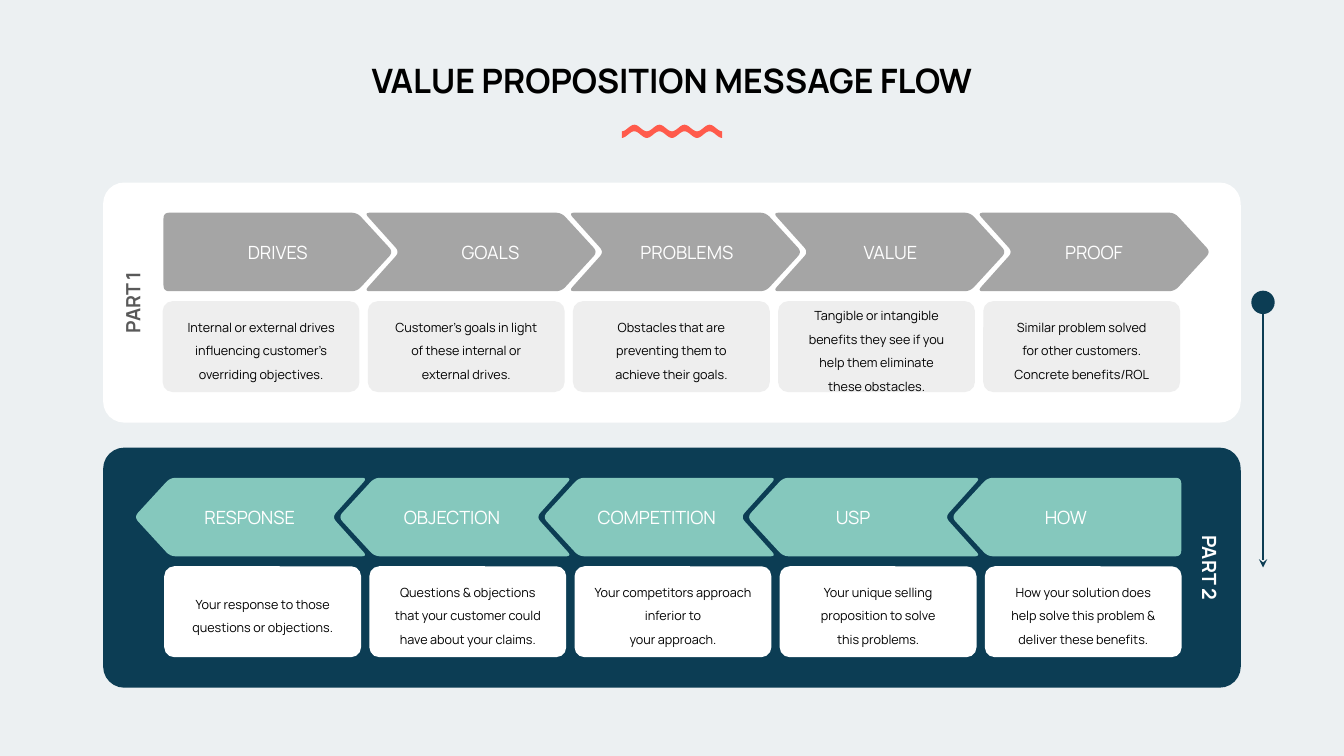
from dataclasses import dataclass
from math import cos, hypot, pi

from lxml.etree import SubElement
from pptx import Presentation
from pptx.dml.color import RGBColor
from pptx.enum.shapes import MSO_CONNECTOR, MSO_SHAPE
from pptx.enum.text import MSO_ANCHOR, PP_ALIGN
from pptx.oxml.ns import qn
from pptx.shapes.autoshape import Shape
from pptx.slide import Slide
from pptx.util import Cm, Pt

FONT = "Manrope"
PALE = RGBColor(0xEC, 0xF0, 0xF2)
BLACK = RGBColor(0, 0, 0)
WHITE = RGBColor(0xFF, 0xFF, 0xFF)
CORAL = RGBColor(0xFF, 0x5B, 0x4C)
NAVY = RGBColor(0x0C, 0x3D, 0x54)
TEAL = RGBColor(0x85, 0xC8, 0xBD)
GREY = RGBColor(0xA5, 0xA5, 0xA5)
LIGHT_GREY = RGBColor(0xEE, 0xEE, 0xEE)
DARK_GREY = RGBColor(0x59, 0x59, 0x59)

# Lengths in centimetres
CHEVRON_WIDTH, CHEVRON_PITCH = 5.75, 5.15
CARD_WIDTH, CARD_HEIGHT, CARD_PITCH = 4.96, 2.29, 5.17
PANEL_LEFT, PANEL_WIDTH, PANEL_HEIGHT = 2.6, 28.67, 6.05
CHEVRON_HEAD = [(4.88, 0), (5.79, 0.99), (4.88, 1.98)]
NOTCHED = [(-0.09, 0), *CHEVRON_HEAD, (-0.09, 1.98), (0.8, 0.99)]
FLAT_TAILED = [(0, 0), *CHEVRON_HEAD, (0, 1.98)]

Point = tuple[float, float]


@dataclass
class Step:
    label: str
    label_center: float
    description: str


@dataclass
class Part:
    name: str
    name_center: float
    name_color: RGBColor
    rotation: int
    top: float
    panel_color: RGBColor
    chevron_color: RGBColor
    chevron_left: float
    card_color: RGBColor
    card_left: float
    points_left: bool
    flat_tail: int
    steps: list[Step]


PART_1 = Part("PART 1", 3.34, DARK_GREY, 270, 4.6, WHITE, GREY, 4.12,
              LIGHT_GREY, 4.1, False, 0, [
    Step("DRIVES", 7.0,
         "Internal or external drives influencing customer’s overriding objectives."),
    Step("GOALS", 12.36,
         "Customer’s goals in light\nof these internal or\nexternal drives."),
    Step("PROBLEMS", 17.31,
         "Obstacles that are preventing them to\nachieve their goals."),
    Step("VALUE", 22.44,
         "Tangible or intangible benefits they see if you\n"
         "help them eliminate\nthese obstacles."),
    Step("PROOF", 27.57,
         "Similar problem solved\nfor other customers.\nConcrete benefits/ROL"),
])
PART_2 = Part("PART 2", 30.49, WHITE, 90, 11.28, NAVY, TEAL, 3.42,
              WHITE, 4.14, True, 4, [
    Step("RESPONSE", 6.29, "Your response to those questions or objections."),
    Step("OBJECTION", 11.39,
         "Questions & objections that your customer could have about your claims."),
    Step("COMPETITION", 16.55,
         "Your competitors approach inferior to\nyour approach."),
    Step("USP", 21.5, "Your unique selling proposition to solve\nthis problems."),
    Step("HOW", 26.86,
         "How your solution does help solve this problem & deliver these benefits."),
])


def paint(shape: Shape, color: RGBColor) -> None:
    shape.shadow.inherit = False
    shape.fill.solid()
    shape.fill.fore_color.rgb = color
    shape.line.fill.background()


def write(shape: Shape, text: str, size: float, color: RGBColor, bold: bool = False,
          inset: float = 0, spacing: float = 1.0) -> None:
    frame = shape.text_frame
    frame.word_wrap = True
    frame.vertical_anchor = MSO_ANCHOR.MIDDLE
    frame.margin_left = frame.margin_right = Cm(inset)
    frame.margin_top = frame.margin_bottom = 0
    para = frame.paragraphs[0]
    para.text = text
    para.alignment = PP_ALIGN.CENTER
    para.line_spacing = spacing
    para.font.name = FONT
    para.font.size = Pt(size)
    para.font.bold = bold
    para.font.color.rgb = color


def add_label(page: Slide, center: float, middle: float, width: float, height: float,
              text: str, size: float, color: RGBColor, bold: bool = False) -> Shape:
    box = page.shapes.add_textbox(Cm(center - width / 2), Cm(middle - height / 2),
                                  Cm(width), Cm(height))
    write(box, text, size, color, bold)
    return box


def add_rounded(page: Slide, left: float, top: float, width: float, height: float,
                corner: float, color: RGBColor) -> Shape:
    box = page.shapes.add_shape(MSO_SHAPE.ROUNDED_RECTANGLE,
                                Cm(left), Cm(top), Cm(width), Cm(height))
    box.adjustments[0] = corner
    paint(box, color)
    return box


def add_outline(page: Slide, points: list[Point], color: RGBColor) -> None:
    start, *rest = [(Cm(x), Cm(y)) for x, y in points]
    builder = page.shapes.build_freeform(*start)
    builder.add_line_segments(rest, close=True)
    paint(builder.convert_to_shape(), color)


def round_corners(corners: list[Point], cut: float = 0.15, pieces: int = 6) -> list[Point]:
    """Replace each corner with a sampled quadratic curve."""
    rounded = []
    for index, (x, y) in enumerate(corners):
        ends = []
        for near_x, near_y in (corners[index - 1], corners[(index + 1) % len(corners)]):
            share = cut / hypot(near_x - x, near_y - y)
            ends.append((x + (near_x - x) * share, y + (near_y - y) * share))
        (x1, y1), (x2, y2) = ends
        for piece in range(pieces + 1):
            t = piece / pieces
            a, b, c = (1 - t) ** 2, 2 * t * (1 - t), t ** 2
            rounded.append((a * x1 + b * x + c * x2, a * y1 + b * y + c * y2))
    return rounded


def add_wave(page: Slide, left: float, middle: float, width: float,
             swing: float = 0.083, waves: int = 4, pieces: int = 96) -> None:
    curve = [(left + width * i / pieces, middle + swing * cos(2 * pi * waves * i / pieces))
             for i in range(pieces + 1)]
    upper = [(x, y - swing) for x, y in curve]
    lower = [(x, y + swing) for x, y in reversed(curve)]
    add_outline(page, upper + lower, CORAL)


def add_part(page: Slide, part: Part) -> None:
    add_rounded(page, PANEL_LEFT, part.top, PANEL_WIDTH, PANEL_HEIGHT, 0.088,
                part.panel_color)
    for index, step in enumerate(part.steps):
        is_flat = index == part.flat_tail
        left = part.chevron_left + index * CHEVRON_PITCH
        corners = round_corners(FLAT_TAILED if is_flat else NOTCHED)
        add_outline(page, [(left + (CHEVRON_WIDTH - x if part.points_left else x),
                            part.top + 0.76 + y) for x, y in corners],
                    part.chevron_color)
        add_label(page, step.label_center, part.top + 1.75, 3.63 if is_flat else 4.19,
                  0.56, step.label, 13, WHITE)
        card = add_rounded(page, part.card_left + index * CARD_PITCH, part.top + 2.99,
                           CARD_WIDTH, CARD_HEIGHT, 0.109, part.card_color)
        write(card, step.description, 9, BLACK, inset=0.4, spacing=1.56)
    name = add_label(page, part.name_center, part.top + PANEL_HEIGHT / 2, 4.29, 0.61,
                     part.name, 14, part.name_color, bold=True)
    name.rotation = part.rotation


def add_flow_arrow(page: Slide, center: float, top: float, bottom: float) -> None:
    arrow = page.shapes.add_connector(MSO_CONNECTOR.STRAIGHT, Cm(center), Cm(top),
                                      Cm(center), Cm(bottom))
    arrow.line.color.rgb = NAVY
    arrow.line.width = Pt(2)
    SubElement(arrow.line._get_or_add_ln(), qn("a:tailEnd"), type="stealth")
    SubElement(arrow._element.spPr, qn("a:effectLst"))
    size = 0.59
    dot = page.shapes.add_shape(MSO_SHAPE.OVAL, Cm(center - size / 2),
                                Cm(top - size / 2), Cm(size), Cm(size))
    paint(dot, NAVY)


def main() -> None:
    deck = Presentation()
    deck.slide_width, deck.slide_height = Cm(33.87), Cm(19.05)
    page = deck.slides.add_slide(deck.slide_layouts[6])
    page.background.fill.solid()
    page.background.fill.fore_color.rgb = PALE
    add_label(page, 16.93, 2.01, 19.79, 1.17, "VALUE PROPOSITION MESSAGE FLOW",
              24, BLACK, bold=True)
    add_wave(page, 15.67, 3.31, 2.53)
    for part in (PART_1, PART_2):
        add_part(page, part)
    add_flow_arrow(page, 31.83, 7.62, 14.3)
    deck.save("out.pptx")


if __name__ == "__main__":
    main()
